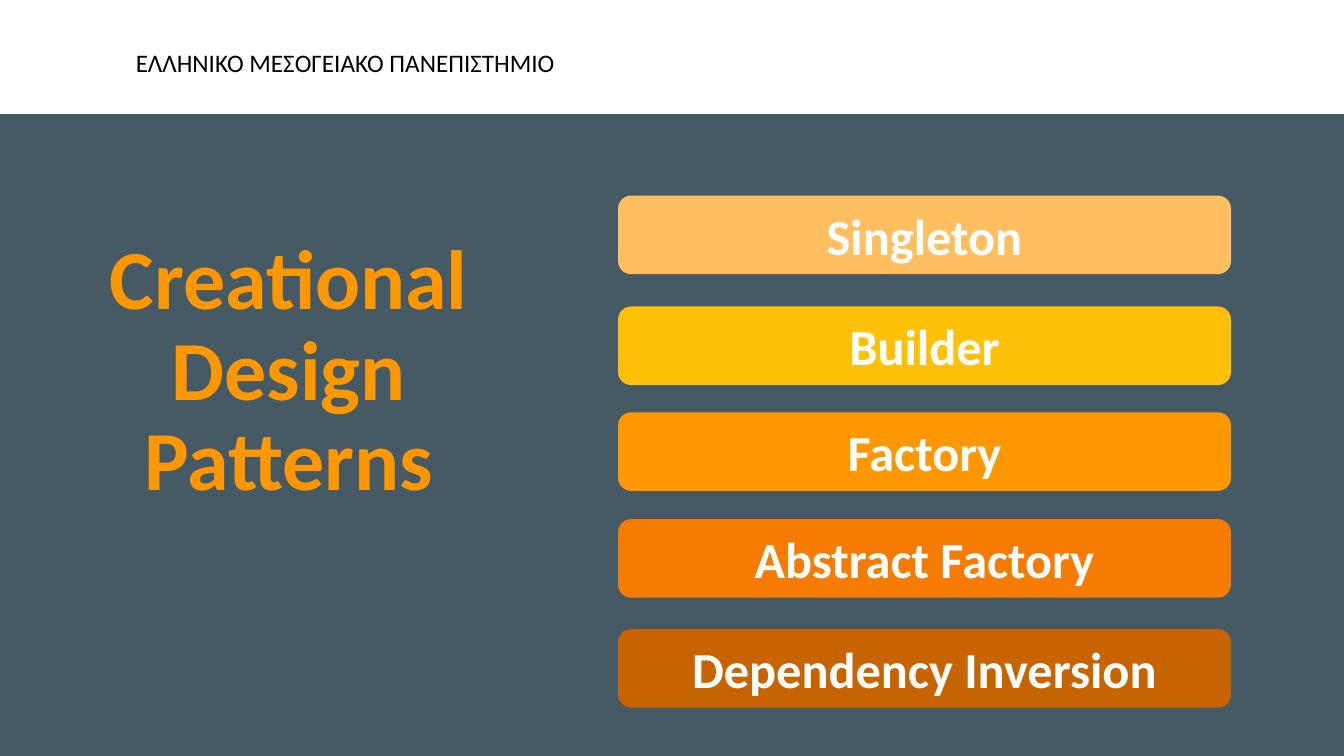
from pptx import Presentation
from pptx import util as u
from pptx.dml import color
from pptx.enum import shapes, text

WIDTH, HEIGHT = 13.33, 7.5
FONT = "Calibri"
WHITE, BLACK, SLATE, ORANGE = "FFFFFF", "000000", "455A64", "FF9800"
PATTERNS = [
    ("Singleton", 1.94, "FFBF61"),
    ("Builder", 3.04, "FFC107"),
    ("Factory", 4.09, ORANGE),
    ("Abstract Factory", 5.15, "F57C00"),
    ("Dependency Inversion", 6.24, "C86400"),
]


def paint(fill, shade):
    """Give a fill one solid colour from a hex string."""
    fill.solid()
    fill.fore_color.rgb = color.RGBColor.from_string(shade)


def write(shape, words, size, shade, bold=False, align=text.PP_ALIGN.CENTER,
          anchor=text.MSO_ANCHOR.MIDDLE, spacing=1.0):
    """Fill a shape with one formatted paragraph."""
    frame = shape.text_frame
    frame.text = words
    frame.word_wrap = True
    frame.vertical_anchor = anchor
    para = frame.paragraphs[0]
    para.alignment = align
    para.line_spacing = spacing
    font = para.runs[0].font
    font.name, font.size, font.bold = FONT, u.Pt(size), bold
    paint(font.fill, shade)


def add_block(page, kind, place, shade):
    """Add a flat preset shape without an outline."""
    block = page.shapes.add_shape(kind, *map(u.Inches, place))
    block.shadow.inherit = False
    paint(block.fill, shade)
    block.line.fill.background()
    return block


def add_label(page, place, words, size, shade, **style):
    """Add a text box with one paragraph."""
    box = page.shapes.add_textbox(*map(u.Inches, place))
    write(box, words, size, shade, **style)


def main():
    """Build the design patterns slide and save it."""
    deck = Presentation()
    deck.slide_width, deck.slide_height = u.Inches(WIDTH), u.Inches(HEIGHT)
    page = deck.slides.add_slide(deck.slide_layouts[6])
    paint(page.background.fill, SLATE)

    add_block(page, shapes.MSO_SHAPE.RECTANGLE, (0, 0, WIDTH, 1.13), WHITE)
    add_label(page, (1.25, 0.42, 4.47, 0.4), "ΕΛΛΗΝΙΚΟ ΜΕΣΟΓΕΙΑΚΟ ΠΑΝΕΠΙΣΤΗΜΙΟ",
              18, BLACK, align=text.PP_ALIGN.LEFT, anchor=text.MSO_ANCHOR.TOP)
    add_label(page, (0.16, 3.02, 5.41, 2.08), "Creational Design Patterns",
              60, ORANGE, bold=True, anchor=text.MSO_ANCHOR.BOTTOM, spacing=0.9)
    for name, top, shade in PATTERNS:
        bar = add_block(page, shapes.MSO_SHAPE.ROUNDED_RECTANGLE,
                        (6.13, top, 6.08, 0.78), shade)
        write(bar, name, 36, WHITE, bold=True)

    deck.save("out.pptx")


if __name__ == "__main__":
    main()
